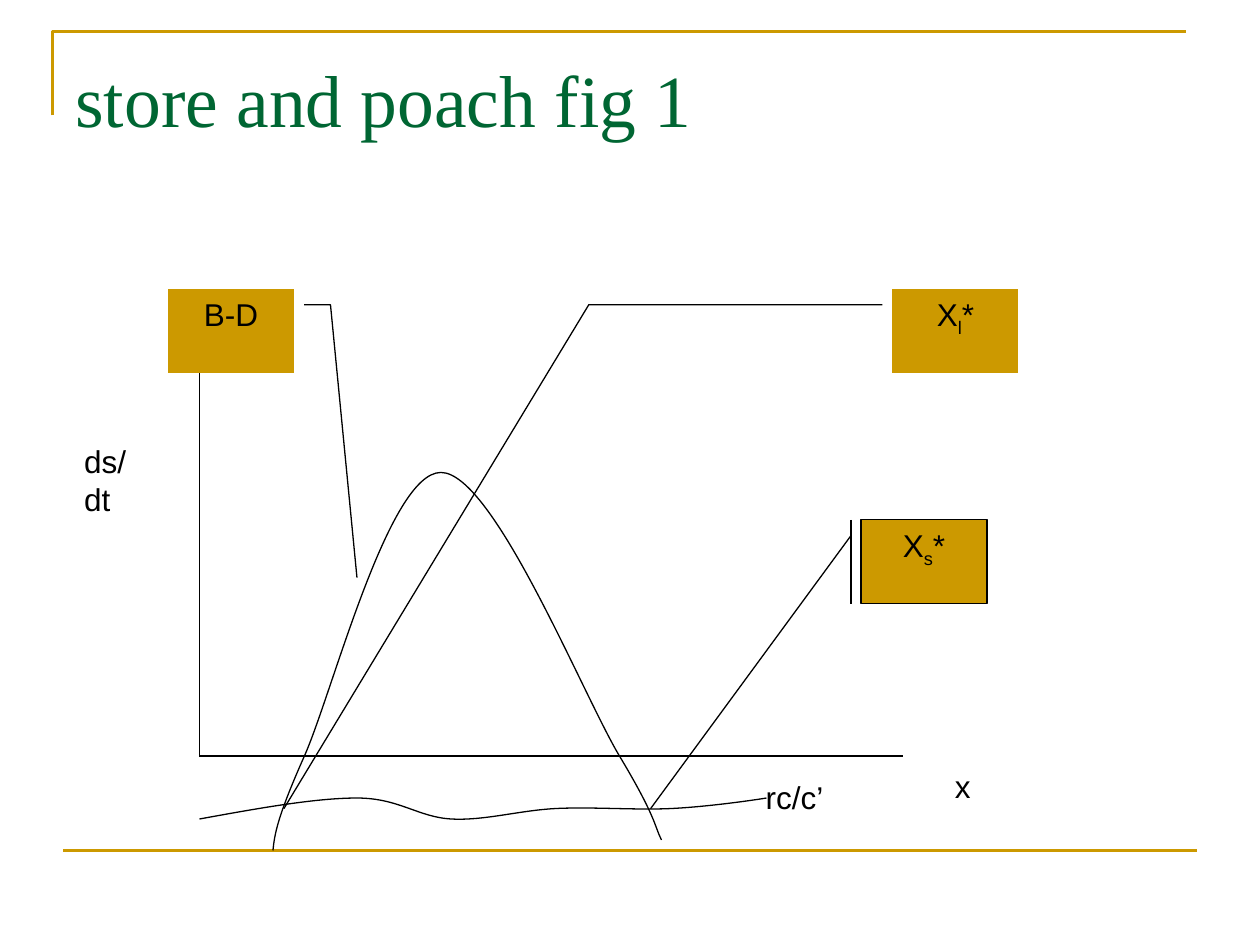
"""Build the slide "store and poach fig 1"."""
from dataclasses import dataclass

from lxml import etree
from pptx import Presentation
from pptx.dml.color import RGBColor
from pptx.enum.shapes import MSO_CONNECTOR, MSO_SHAPE
from pptx.enum.text import MSO_ANCHOR, MSO_AUTO_SIZE, PP_ALIGN
from pptx.oxml.ns import qn
from pptx.util import Pt

STRAIGHT = MSO_CONNECTOR.STRAIGHT
BENT_CALLOUT = MSO_SHAPE.LINE_CALLOUT_2_NO_BORDER
BAR_CALLOUT = MSO_SHAPE.LINE_CALLOUT_1_BORDER_AND_ACCENT_BAR
TOP = MSO_ANCHOR.TOP
FIT_TEXT = MSO_AUTO_SIZE.SHAPE_TO_FIT_TEXT
CENTER = PP_ALIGN.CENTER


@dataclass(frozen=True)
class Theme:
    gold: RGBColor = RGBColor(0xCC, 0x99, 0x00)
    green: RGBColor = RGBColor(0x00, 0x66, 0x33)
    black: RGBColor = RGBColor(0, 0, 0)
    title_font: str = "Times New Roman"
    body_font: str = "Arial"
    title_size: float = 42
    body_size: float = 18
    rule_width: float = 1.5
    line_width: float = 0.75


class SlideBuilder:
    def __init__(self, slide, theme):
        self.slide = slide
        self.theme = theme

    def style_line(self, line, is_rule=False):
        line.color.rgb = self.theme.gold if is_rule else self.theme.black
        line.width = Pt(self.theme.rule_width if is_rule else self.theme.line_width)

    def style_run(self, run, is_title=False):
        theme = self.theme
        run.font.name = theme.title_font if is_title else theme.body_font
        run.font.size = Pt(theme.title_size if is_title else theme.body_size)
        run.font.color.rgb = theme.green if is_title else theme.black

    def line(self, start, end, is_rule=False):
        points = [Pt(value) for value in (*start, *end)]
        connector = self.slide.shapes.add_connector(STRAIGHT, *points)
        etree.SubElement(connector._element.spPr, qn("a:effectLst"))
        self.style_line(connector.line, is_rule)

    def outline(self, points, is_rule=False):
        start, *others = [(Pt(x), Pt(y)) for x, y in points]
        builder = self.slide.shapes.build_freeform(*start)
        builder.add_line_segments(others, close=False)
        shape = builder.convert_to_shape()
        shape.shadow.inherit = False
        shape.fill.background()
        self.style_line(shape.line, is_rule)
        return shape

    def curve(self, points):
        shape = self.outline(points)
        segments = list(shape._element.iter(qn("a:lnTo")))
        for index in range(0, len(segments), 3):
            bezier = etree.Element(qn("a:cubicBezTo"))
            segments[index].addprevious(bezier)
            for segment in segments[index:index + 3]:
                bezier.append(segment[0])
                segment.getparent().remove(segment)

    def title(self, text, left, top, width, height):
        box = self.slide.shapes.add_textbox(Pt(left), Pt(top), Pt(width), Pt(height))
        frame = box.text_frame
        frame.word_wrap = True
        frame.margin_top = Pt(9)
        frame.text = text
        self.style_run(frame.paragraphs[0].runs[0], is_title=True)

    def label(self, text, left, top, width, height=29):
        box = self.slide.shapes.add_textbox(Pt(left), Pt(top), Pt(width), Pt(height))
        frame = box.text_frame
        frame.word_wrap = False
        frame.auto_size = FIT_TEXT
        frame.text = text
        self.style_run(frame.paragraphs[0].runs[0])

    def callout(self, kind, left, top, adjustments, text, subscript="", suffix=""):
        shape = self.slide.shapes.add_shape(kind, Pt(left), Pt(top), Pt(72), Pt(48))
        shape.shadow.inherit = False
        for index, value in enumerate(adjustments):
            shape.adjustments[index] = value
        shape.fill.solid()
        shape.fill.fore_color.rgb = self.theme.gold
        self.style_line(shape.line)
        shape.text_frame.vertical_anchor = TOP
        paragraph = shape.text_frame.paragraphs[0]
        paragraph.alignment = CENTER
        for part in filter(None, (text, subscript, suffix)):
            run = paragraph.add_run()
            run.text = part
            self.style_run(run)
            if part == subscript:
                run._r.get_or_add_rPr().set("baseline", "-25000")


def main():
    presentation = Presentation()
    presentation.slide_width, presentation.slide_height = Pt(720), Pt(540)
    slide = presentation.slides.add_slide(presentation.slide_layouts[6])
    builder = SlideBuilder(slide, Theme())

    builder.outline([(30, 66), (30, 18), (678, 18)], is_rule=True)
    builder.line((36, 486), (684, 486), is_rule=True)
    builder.title("store and poach fig 1", 36, 21.6, 648, 90)

    origin = (114, 432)
    builder.line((114, 210), origin)
    builder.line(origin, (516, 432))
    builder.curve([
        (156, 486), (157, 477), (158, 468), (174, 432),
        (190, 396), (222, 270), (252, 270),
        (282, 270), (333, 397), (354, 432),
        (375, 467), (374, 472), (378, 480),
    ])
    builder.curve([
        (114, 468), (147, 462), (180, 456), (204, 456),
        (228, 456), (239, 467), (258, 468),
        (277, 469), (297, 463), (318, 462),
        (339, 461), (364, 463), (384, 462),
        (404, 461), (429, 457.5), (438, 456),
    ])

    builder.callout(BAR_CALLOUT, 492, 297, (0.19, -0.08, 3.44, -1.67), "X", "s", "*")
    builder.callout(BENT_CALLOUT, 510, 165,
                    (0.19, -0.08, 0.19, -2.41, 6.19, -4.83), "X", "l", "*")
    builder.label("rc/c’", 430.5, 441, 47.5)
    builder.callout(BENT_CALLOUT, 96, 165, (0.19, 1.08, 0.19, 1.29, 3.44, 1.5), "B-D")
    builder.label("ds/dt", 41, 249, 53)
    builder.label("x", 538.5, 435, 24)

    presentation.save("out.pptx")


if __name__ == "__main__":
    main()
